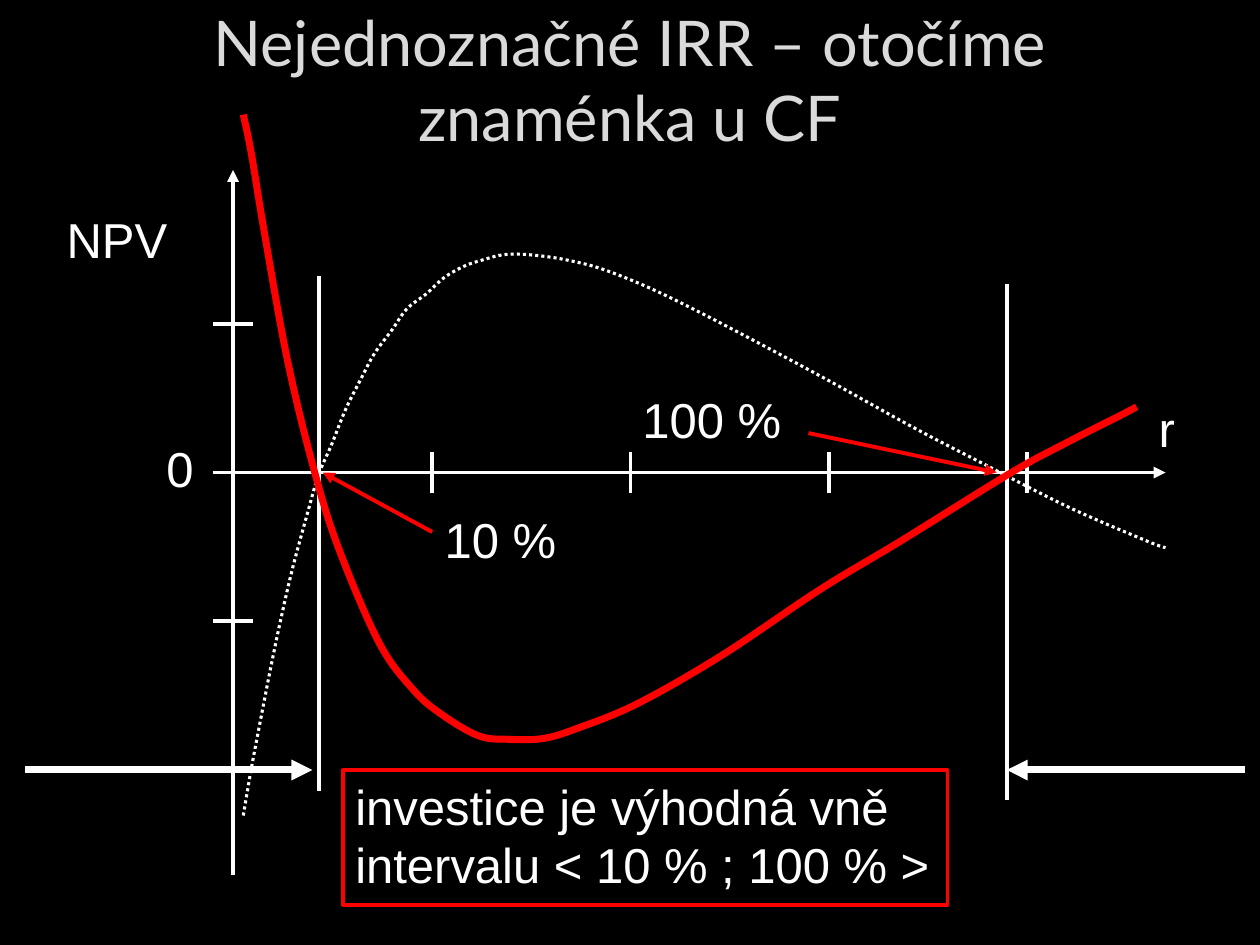
from dataclasses import dataclass

import pptx
import pptx.dml.color
import pptx.enum.dml
import pptx.enum.shapes
import pptx.enum.text
import pptx.oxml.ns
import pptx.oxml.xmlchemy
import pptx.util

Pt = pptx.util.Pt
ALIGN = pptx.enum.text.PP_ALIGN
ANCHOR = pptx.enum.text.MSO_ANCHOR
new_element = pptx.oxml.xmlchemy.OxmlElement


@dataclass
class Theme:
    background: str = "000000"
    ink: str = "FFFFFF"
    accent: str = "FF0000"
    title_color: str = "DADADA"
    title_font: str = "Lato"
    body_font: str = "Arial"
    title_size: float = 36
    body_size: float = 28
    body_leading: float = 33.6
    thin: float = 2.25
    thick: float = 4
    dotted: float = 1.75


THEME = Theme()

# Content; all lengths in points
TITLE = "Nejednoznačné IRR – otočíme znaménka u CF"
VERDICT = "investice je výhodná vně intervalu < 10 % ; 100 % >"
VERDICT_BOX = (196, 440, 345.5, 77)
LABELS = [  # text, left, top, width
    ("NPV", 31, 116.5, 102),
    ("10 %", 247, 287.5, 79),
    ("100 %", 360, 219, 119),
    ("r", 655, 224.5, 68),
    ("0", 88, 247, 45),
]
AXIS_X, AXIS_Y = 133.2, 270
TICK = 11.5
Y_TICKS = [AXIS_Y + step * 85 for step in (-1, 0, 1)]
X_TICKS = [247 + i * 113.3 for i in range(4)]
IRR_LIMITS = [(182.2, 157.7, 452.2), (575.3, 162, 457)]  # x, top, bottom
AXES = [(AXIS_X, 500, AXIS_X, 97.2), (AXIS_X - TICK, AXIS_Y, 666, AXIS_Y)]
POINTERS = [(247, 304, 184.5, AXIS_Y), (462, 247.5, 569.5, AXIS_Y)]
OUTSIDE_ARROWS = [(14.4, 440, 178.5, 440), (711.5, 440, 575.3, 440)]
ORIGINAL_NPV = [
    (139, 466), (144, 437), (150.5, 403), (155, 380), (160, 356),
    (167, 325.5), (175.5, 294), (182, 271.5), (189.5, 254), (197.5, 234),
    (206.5, 216), (214, 202), (224, 188.5), (232.5, 176.5), (243.5, 168),
    (254, 158.5), (265.5, 152), (276, 148.5), (288, 145.5), (301.5, 145.5),
    (323.5, 148.5), (349, 155.5), (389, 173), (462.5, 211.5),
    (520.5, 243.5), (558, 263), (610, 289.5), (655, 309), (666, 313),
]
REVERSED_NPV = [
    (139, 65.5), (143.5, 87), (151, 132.5), (164, 204.5), (178.5, 265),
    (193, 312), (216.5, 367), (236, 394), (252, 408), (273.5, 420.5),
    (291, 422.5), (310.5, 422), (330.5, 416), (364.5, 402), (412.5, 374.5),
    (468.5, 337), (515, 309), (578, 270), (610.5, 252.5), (641, 237),
    (649.5, 232.5),
]


def rgb(value):
    return pptx.dml.color.RGBColor.from_string(value)


def write(tf, text, font=THEME.body_font, size=THEME.body_size,
          color=THEME.ink, align=ALIGN.LEFT, anchor=ANCHOR.TOP, leading=None):
    tf.word_wrap = True
    tf.vertical_anchor = anchor
    p = tf.paragraphs[0]
    p.alignment = align
    if leading:
        p.line_spacing = Pt(leading)
    r = p.add_run()
    r.text = text
    r.font.name = font
    r.font.size = Pt(size)
    r.font.color.rgb = rgb(color)


def add_line(s, x1, y1, x2, y2, color=THEME.ink, width=THEME.thin, arrow=False):
    line = s.shapes.add_connector(
        pptx.enum.shapes.MSO_CONNECTOR.STRAIGHT, Pt(x1), Pt(y1), Pt(x2), Pt(y2))
    line.line.color.rgb = rgb(color)
    line.line.width = Pt(width)
    spPr = line._element.spPr
    if arrow:
        tail = new_element("a:tailEnd")
        tail.set("type", "triangle")
        spPr.get_or_add_ln().append(tail)
    spPr.append(new_element("a:effectLst"))


def add_curve(s, knots, color, width, dash=None):
    """Draw a smooth open curve (Catmull-Rom, as Bezier segments)."""
    emu = [(Pt(x), Pt(y)) for x, y in knots]
    builder = s.shapes.build_freeform(*emu[0])
    builder.add_line_segments(emu[1:], close=False)
    sp = builder.convert_to_shape()
    sp.shadow.inherit = False
    sp.fill.background()
    sp.line.color.rgb = rgb(color)
    sp.line.width = Pt(width)
    if dash:
        sp.line.dash_style = dash
    ends = [emu[0]] + emu + [emu[-1]]
    segments = list(sp._element.iter(pptx.oxml.ns.qn("a:lnTo")))
    for segment, a, b, c, d in zip(segments, ends, ends[1:], ends[2:], ends[3:]):
        bezier = new_element("a:cubicBezTo")
        controls = [
            [q + (n - m) / 6 for m, q, n in zip(a, b, c)],
            [q - (n - m) / 6 for m, q, n in zip(b, c, d)],
            c,
        ]
        for x, y in controls:
            pt = new_element("a:pt")
            pt.set("x", str(round(x - sp.left)))
            pt.set("y", str(round(y - sp.top)))
            bezier.append(pt)
        segment.getparent().replace(segment, bezier)


def main():
    prs = pptx.Presentation()
    prs.slide_width, prs.slide_height = Pt(720), Pt(540)
    s = prs.slides.add_slide(prs.slide_layouts[5])
    s.background.fill.solid()
    s.background.fill.fore_color.rgb = rgb(THEME.background)

    title = s.shapes.title
    title.left, title.top, title.width, title.height = map(Pt, (36, 0, 648, 90))
    write(title.text_frame, TITLE, font=THEME.title_font, size=THEME.title_size,
          color=THEME.title_color, align=ALIGN.CENTER, anchor=ANCHOR.MIDDLE)

    for axis in AXES:
        add_line(s, *axis, arrow=True)
    for y in Y_TICKS:
        add_line(s, AXIS_X - TICK, y, AXIS_X + TICK, y)
    for x in X_TICKS:
        add_line(s, x, AXIS_Y - TICK, x, AXIS_Y + TICK)
    for text, left, top, width in LABELS:
        box = s.shapes.add_textbox(Pt(left), Pt(top), Pt(width), Pt(41))
        write(box.text_frame, text, leading=THEME.body_leading)

    add_curve(s, ORIGINAL_NPV, THEME.ink, THEME.dotted,
              dash=pptx.enum.dml.MSO_LINE.ROUND_DOT)
    for pointer in POINTERS:
        add_line(s, *pointer, color=THEME.accent, arrow=True)
    for x, top, bottom in IRR_LIMITS:
        add_line(s, x, top, x, bottom)

    box = s.shapes.add_shape(
        pptx.enum.shapes.MSO_SHAPE.RECTANGLE, *map(Pt, VERDICT_BOX))
    box.shadow.inherit = False
    box.fill.solid()
    box.fill.fore_color.rgb = rgb(THEME.background)
    box.line.color.rgb = rgb(THEME.accent)
    box.line.width = Pt(THEME.thin)
    write(box.text_frame, VERDICT, leading=THEME.body_leading)

    add_curve(s, REVERSED_NPV, THEME.accent, THEME.thick)
    for arrow in OUTSIDE_ARROWS:
        add_line(s, *arrow, width=THEME.thick, arrow=True)

    prs.save("out.pptx")


if __name__ == "__main__":
    main()
